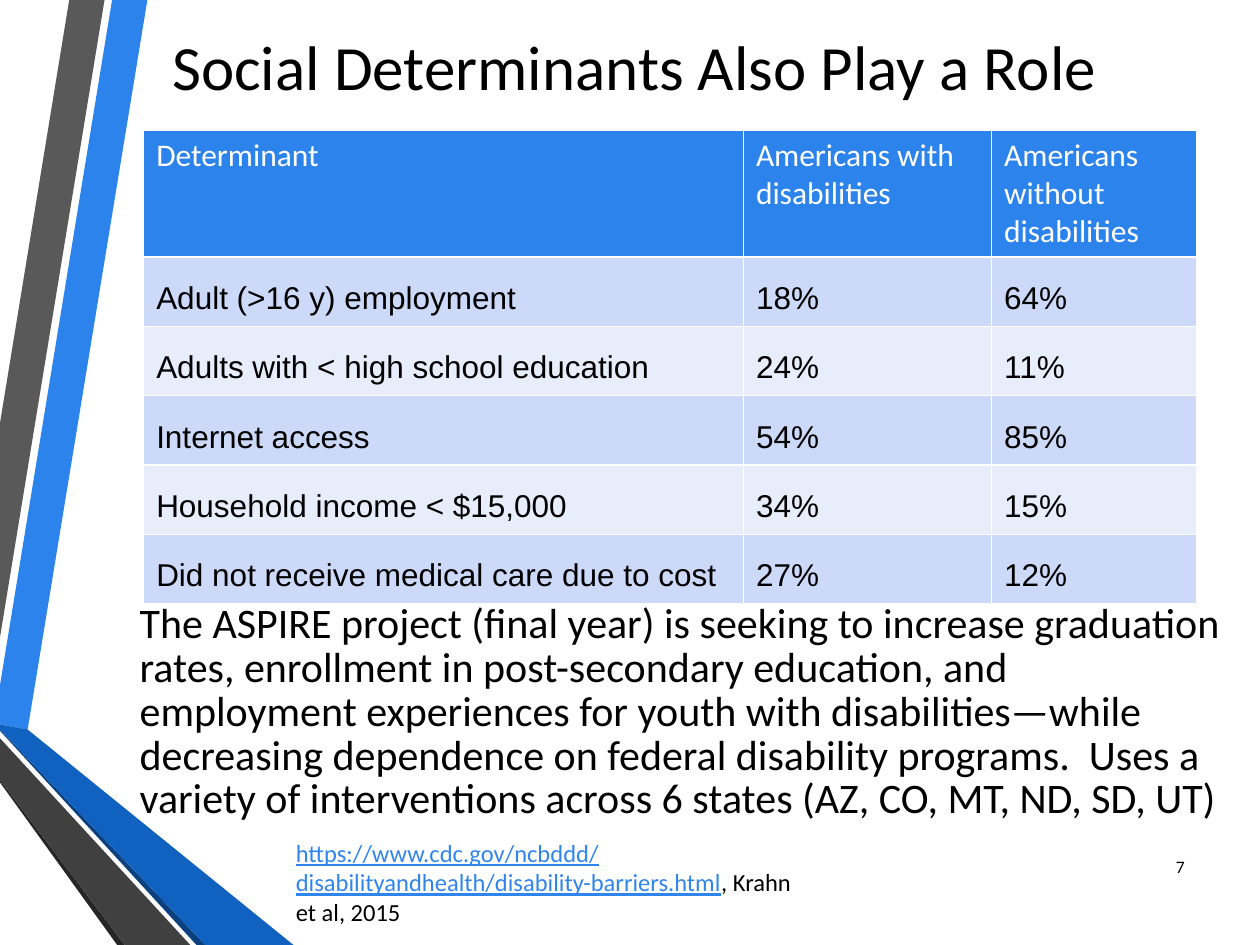
from lxml.etree import SubElement
from pptx import Presentation
from pptx.dml.color import RGBColor
from pptx.enum.text import MSO_ANCHOR as Anchor, PP_ALIGN as Align
from pptx.oxml.ns import qn
from pptx.util import Inches, Pt

THEME = {
    "text": "000000", "white": "FFFFFF", "link": "3085ED",
    "header": "2C83EC", "bands": ("CDD9F8", "E8EDFB"),
    "heading_font": "Calibri", "data_font": "Arial",
    "title": 36, "body": 24, "table": 18, "source": 14, "number": 10,
}

TITLE = "Social Determinants Also Play a Role"
DETERMINANTS = [
    ("Determinant", "Americans with disabilities", "Americans without disabilities"),
    ("Adult (>16 y) employment", "18%", "64%"),
    ("Adults with < high school education", "24%", "11%"),
    ("Internet access", "54%", "85%"),
    ("Household income < $15,000", "34%", "15%"),
    ("Did not receive medical care due to cost", "27%", "12%"),
]
PROJECT = (
    "The ASPIRE project (final year) is seeking to increase graduation rates, "
    "enrollment in post-secondary education, and employment experiences for youth "
    "with disabilities—while decreasing dependence on federal disability programs.  "
    "Uses a variety of interventions across 6 states (AZ, CO, MT, ND, SD, UT)"
)
SOURCE_URL = "https://www.cdc.gov/ncbddd/disabilityandhealth/disability-barriers.html"
SOURCE_CREDIT = ", Krahn et al, 2015"
PAGE = "7"

# Ribbon colour and corner points, back to front
RIBBONS = [
    ("2C83EC", [(0, 5.44), (0, 5.75), (0.22, 5.79), (1.17, 0), (0.89, 0)]),
    ("595959", [(0.83, 0), (0.55, 0), (0, 3.36), (0, 5.06)]),
    ("262626", [(0, 6.19), (0, 6.21), (0.93, 7.5), (0.99, 7.5)]),
    ("0C4180", [(0, 5.79), (0, 5.8), (1.56, 7.5), (1.63, 7.5)]),
    ("1161C1", [(0, 5.79), (1.63, 7.5), (2.33, 7.5), (0.22, 5.79), (0, 5.75)]),
    ("404040", [(0, 6.19), (0.99, 7.5), (1.51, 7.5), (0, 5.86)]),
]

TABLE_LEFT, TABLE_TOP = 1.14, 1.03
COLUMN_WIDTHS = (4.76, 1.97, 1.63)
HEADER_HEIGHT, ROW_HEIGHT = 1.01, 0.5


def rgb(colour):
    return RGBColor.from_string(colour)


def add_run(paragraph, text, size, colour=THEME["text"], font=THEME["heading_font"], **extra):
    run = paragraph.add_run()
    run.text = text
    run.font.color.rgb = rgb(colour)
    for name, value in {"size": Pt(size), "name": font, **extra}.items():
        setattr(run.font, name, value)


def add_text(slide, box, runs, anchor=Anchor.TOP, **paragraph_format):
    frame = slide.shapes.add_textbox(*map(Inches, box)).text_frame
    frame.word_wrap = True
    frame.vertical_anchor = anchor
    paragraph = frame.paragraphs[0]
    for name, value in paragraph_format.items():
        setattr(paragraph, name, value)
    for text, style in runs:
        add_run(paragraph, text, **style)


def add_ribbon(slide, colour, corners):
    start, *others = [(Inches(x), Inches(y)) for x, y in corners]
    builder = slide.shapes.build_freeform(*start)
    builder.add_line_segments(others, close=True)
    ribbon = builder.convert_to_shape()
    ribbon.shadow.inherit = False
    ribbon.fill.solid()
    ribbon.fill.fore_color.rgb = rgb(colour)
    ribbon.line.fill.background()


def add_borders(cell):
    """Draw a thin white line on all four sides; call before filling the cell."""
    properties = cell._tc.get_or_add_tcPr()
    for side in ("a:lnL", "a:lnR", "a:lnT", "a:lnB"):
        line = SubElement(properties, qn(side), w=str(Pt(1)))
        fill = SubElement(line, qn("a:solidFill"))
        SubElement(fill, qn("a:srgbClr"), val=THEME["white"])


def add_determinants(slide):
    heights = [HEADER_HEIGHT] + [ROW_HEIGHT] * (len(DETERMINANTS) - 1)
    box = (TABLE_LEFT, TABLE_TOP, sum(COLUMN_WIDTHS), sum(heights))
    table = slide.shapes.add_table(
        len(heights), len(COLUMN_WIDTHS), *map(Inches, box)).table
    for column, width in zip(table.columns, COLUMN_WIDTHS):
        column.width = Inches(width)
    for row, height in zip(table.rows, heights):
        row.height = Inches(height)

    for r, values in enumerate(DETERMINANTS):
        is_header = r == 0
        fill = THEME["header"] if is_header else THEME["bands"][(r - 1) % 2]
        colour = THEME["white"] if is_header else THEME["text"]
        font = THEME["heading_font"] if is_header else THEME["data_font"]
        for c, value in enumerate(values):
            cell = table.cell(r, c)
            add_borders(cell)
            cell.fill.solid()
            cell.fill.fore_color.rgb = rgb(fill)
            paragraph = cell.text_frame.paragraphs[0]
            if not is_header:
                paragraph.line_spacing = 1.5
            add_run(paragraph, value, THEME["table"], colour, font, bold=False)


def main():
    deck = Presentation()
    deck.slide_width, deck.slide_height = Inches(10), Inches(7.5)
    slide = deck.slides.add_slide(deck.slide_layouts[6])

    for colour, corners in RIBBONS:
        add_ribbon(slide, colour, corners)
    add_text(slide, (0.32, -0.23, 9.43, 1.5), [(TITLE, {"size": THEME["title"]})],
             Anchor.MIDDLE, alignment=Align.CENTER)
    add_determinants(slide)
    source = {"size": THEME["source"]}
    add_text(slide, (2.25, 6.59, 4.27, 0.81),
             [(SOURCE_URL, {**source, "colour": THEME["link"], "underline": True}),
              (SOURCE_CREDIT, source)], Anchor.BOTTOM)
    add_text(slide, (1.01, 4.74, 8.88, 1.85), [(PROJECT, {"size": THEME["body"]})],
             line_spacing=Pt(25))
    add_text(slide, (9.03, 6.68, 0.47, 0.4), [(PAGE, {"size": THEME["number"]})],
             Anchor.MIDDLE, alignment=Align.RIGHT)
    deck.save("out.pptx")


if __name__ == "__main__":
    main()
